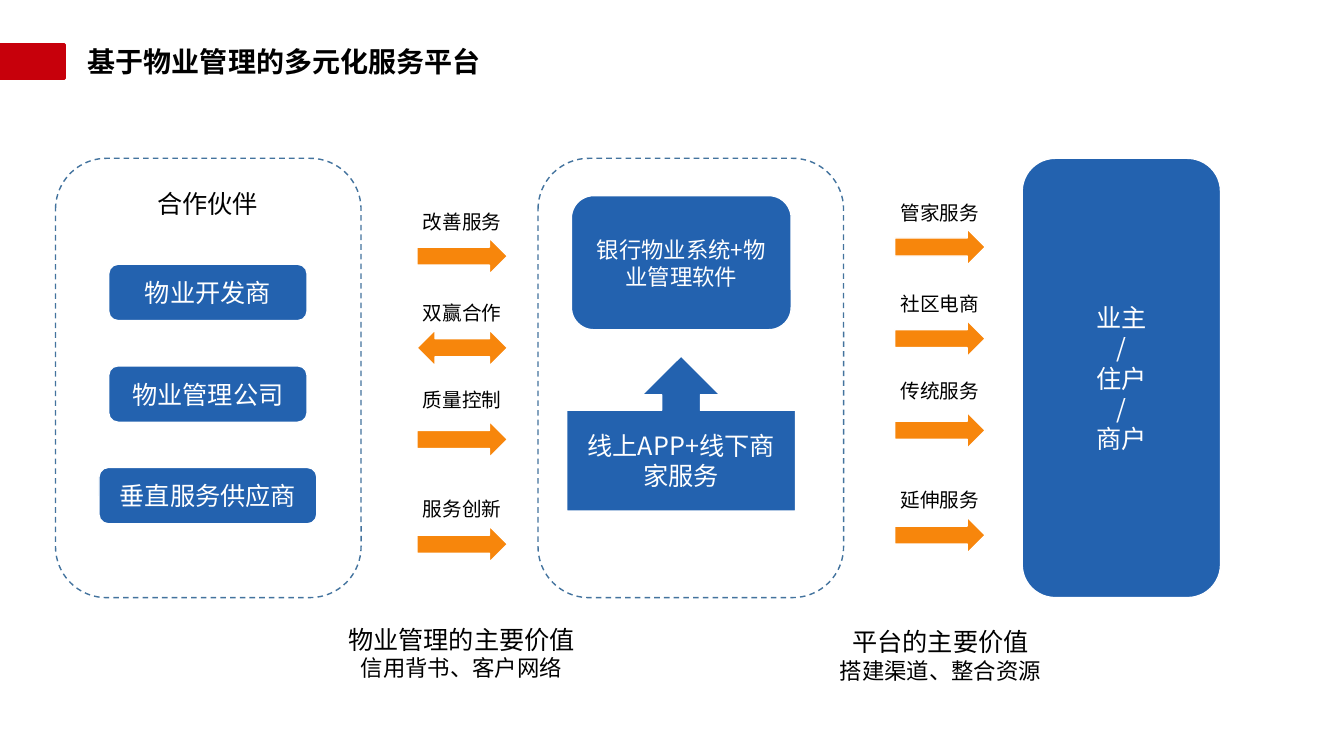
from dataclasses import dataclass

from lxml import etree
from pptx import Presentation
from pptx import util as u
from pptx.dml.color import RGBColor
from pptx.enum import dml, shapes, text
from pptx.oxml.ns import qn


@dataclass(frozen=True)
class Theme:
    """Colours, font and type sizes of the slide."""
    red: str = "C7000B"
    blue: str = "2362AF"
    orange: str = "F7860C"
    dash: str = "43739E"
    black: str = "000000"
    white: str = "FFFFFF"
    font: str = "Noto Sans CJK SC"
    title: int = 20
    head: int = 18
    body: int = 16
    label: int = 14


T = Theme()
KIND = shapes.MSO_SHAPE


def write(tf, lines, color, align=text.PP_ALIGN.CENTER, bold=False):
    """Write (string, size) lines into a text frame, one paragraph each."""
    tf.word_wrap = True
    for i, (string, size) in enumerate(lines):
        p = tf.paragraphs[0] if i == 0 else tf.add_paragraph()
        p.alignment = align
        r = p.add_run()
        r.text = string
        r.font.size, r.font.bold, r.font.name = u.Pt(size), bold, T.font
        r.font.color.rgb = RGBColor.from_string(color)
        etree.SubElement(r.font._element, qn("a:ea"), typeface=T.font)


def add_block(s, kind, box, fill, line=T.white, width=1, lines=()):
    """Add a filled shape at a box in centimetres, with centred text."""
    sp = s.shapes.add_shape(kind, *map(u.Cm, box))
    sp.shadow.inherit = False
    sp.fill.solid()
    sp.fill.fore_color.rgb = RGBColor.from_string(fill)
    sp.line.color.rgb = RGBColor.from_string(line)
    sp.line.width = u.Pt(width)
    if lines:
        sp.text_frame.vertical_anchor = text.MSO_ANCHOR.MIDDLE
        write(sp.text_frame, lines, T.white)
    return sp


def add_label(s, box, lines):
    """Add a centred black text box that grows with its text."""
    tf = s.shapes.add_textbox(*map(u.Cm, box)).text_frame
    write(tf, lines, T.black)
    tf.auto_size = text.MSO_AUTO_SIZE.SHAPE_TO_FIT_TEXT


def add_header(s, x, y, w, h):
    """Place the red bar and the slide title."""
    add_block(s, KIND.RECTANGLE, (x, y + 0.13, 1.63, 0.86), T.red, T.red, 2)
    title = s.shapes.title
    title.left, title.top = u.Cm(x + 1.96), u.Cm(y)
    title.width, title.height = u.Cm(w), u.Cm(h)
    tf = title.text_frame
    tf.vertical_anchor = text.MSO_ANCHOR.TOP
    write(tf, [("基于物业管理的多元化服务平台", T.title)], T.black,
          text.PP_ALIGN.LEFT, True)
    tf.auto_size = text.MSO_AUTO_SIZE.SHAPE_TO_FIT_TEXT


def add_panel(s, box):
    """Add a dashed rounded frame."""
    sp = add_block(s, KIND.ROUNDED_RECTANGLE, box, T.white, T.dash)
    sp.line.dash_style = dml.MSO_LINE.DASH


def add_partners(s, x, y, w, h):
    """Place the partner panel with its heading and three partners."""
    add_panel(s, (x, y, w, h))
    add_label(s, (x + 1.83, y + 0.63, 4, 1.02), [("合作伙伴", T.head)])
    partners = [("物业开发商", 5), ("物业管理公司", 5), ("垂直服务供应商", 5.49)]
    for i, (name, width) in enumerate(partners):
        box = (x + 3.84 - width / 2, y + 2.67 + i * 2.56, width, 1.42)
        add_block(s, KIND.ROUNDED_RECTANGLE, box, T.blue,
                  lines=[(name, T.head)])


def add_platform(s, x, y, w, h):
    """Place the platform panel with its software and service blocks."""
    add_panel(s, (x, y, w, h))
    add_block(s, KIND.ROUNDED_RECTANGLE, (x + 0.84, y + 0.94, 5.54, 3.38),
              T.blue, lines=[("银行物业系统+物业管理软件", T.body)])
    add_block(s, KIND.UP_ARROW_CALLOUT, (x + 0.72, y + 4.98, 5.77, 3.91),
              T.blue, lines=[("线上APP+线下商家服务", T.head)])


def add_flows(s, x, y, w, flows):
    """Place a column of labelled arrows."""
    label_tops, arrow_tops = (0, 2.31, 4.5, 7.24), (0.84, 3.15, 5.46, 8.1)
    for (name, kind), label, arrow in zip(flows, label_tops, arrow_tops):
        add_label(s, (x, y + label, w, 0.86), [(name, T.label)])
        add_block(s, kind, (x + 0.86, y + arrow, 2.28, 0.91), T.orange)


def add_owners(s, *box):
    """Place the tall block of end customers."""
    lines = [(name, T.head) for name in ("业主", "/", "住户", "/", "商户")]
    add_block(s, KIND.ROUNDED_RECTANGLE, box, T.blue, lines=lines)


def add_value(s, x, y, heading, detail):
    """Place a two-line value statement."""
    add_label(s, (x, y, 7.06, 1.7), [(heading, T.head), (detail, T.body)])


def main():
    """Build and save the slide."""
    prs = Presentation()
    prs.slide_width, prs.slide_height = u.Cm(33.87), u.Cm(19.05)
    s = prs.slides.add_slide(prs.slide_layouts[5])
    right, both = KIND.RIGHT_ARROW, KIND.LEFT_RIGHT_ARROW
    add_header(s, 0, 0.99, 17.81, 1.12)
    add_partners(s, 1.4, 3.99, 7.7, 11.07)
    add_flows(s, 9.65, 5.16, 3.99, [("改善服务", right), ("双赢合作", both),
                                    ("质量控制", right), ("服务创新", right)])
    add_platform(s, 13.56, 3.99, 7.7, 11.07)
    add_flows(s, 21.69, 4.93, 3.99, [("管家服务", right), ("社区电商", right),
                                     ("传统服务", right), ("延伸服务", right)])
    add_owners(s, 25.76, 3.99, 5, 11.07)
    add_value(s, 8.1, 15.6, "物业管理的主要价值", "信用背书、客户网络")
    add_value(s, 20.17, 15.67, "平台的主要价值", "搭建渠道、整合资源")
    prs.save("out.pptx")


if __name__ == "__main__":
    main()
